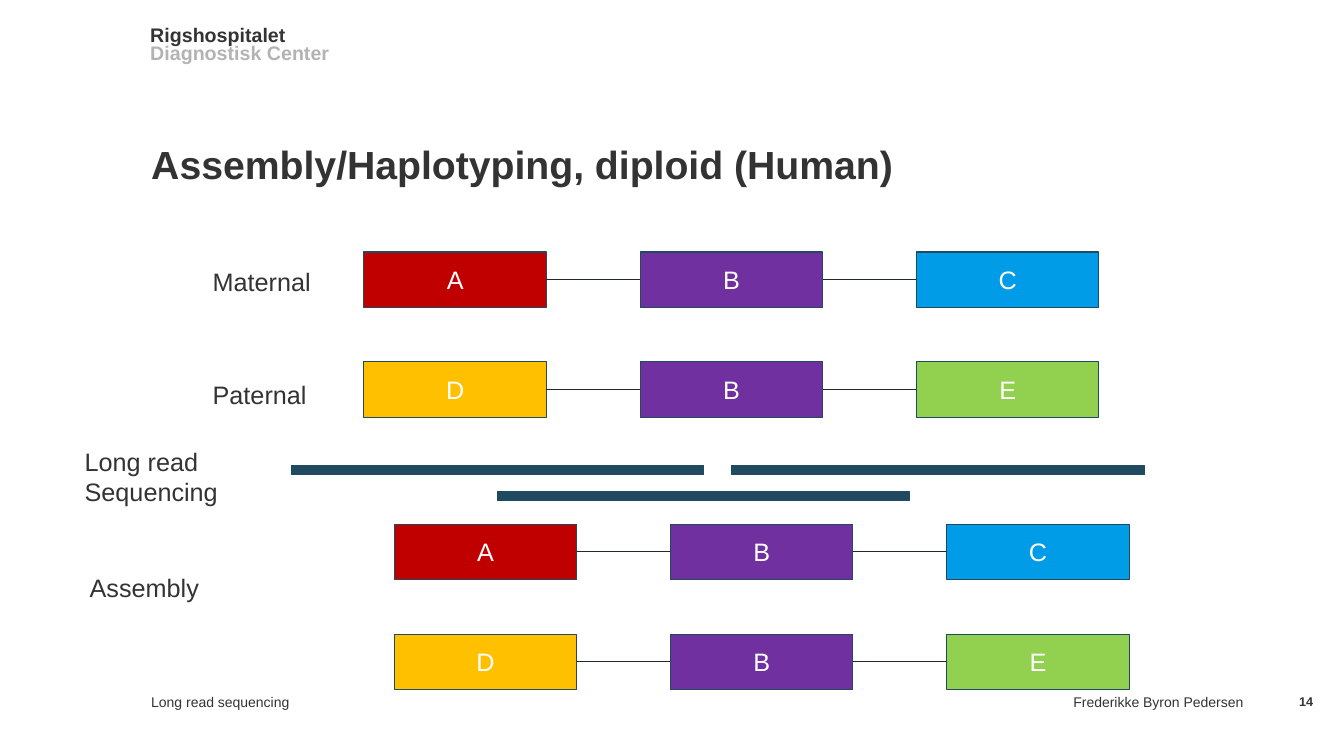
from lxml import etree
from pptx import Presentation
from pptx.dml.color import RGBColor
from pptx.enum.shapes import MSO_CONNECTOR, MSO_SHAPE
from pptx.enum.text import MSO_ANCHOR, PP_ALIGN
from pptx.oxml.ns import qn
from pptx.util import Inches, Pt

INK = RGBColor(0x33, 0x33, 0x33)
GREY = RGBColor(0xB3, 0xB3, 0xB3)
WHITE = RGBColor(0xFF, 0xFF, 0xFF)
PETROL = RGBColor(0x1F, 0x4A, 0x60)
LINK = RGBColor(0x1F, 0x29, 0x36)
GENE_COLORS = {
    "A": RGBColor(0xC0, 0x00, 0x00),
    "B": RGBColor(0x70, 0x30, 0xA0),
    "C": RGBColor(0x00, 0x9C, 0xE8),
    "D": RGBColor(0xFF, 0xC0, 0x00),
    "E": RGBColor(0x92, 0xD0, 0x50),
}
FONT = "Arial"
LEFT, CENTER, RIGHT = PP_ALIGN.LEFT, PP_ALIGN.CENTER, PP_ALIGN.RIGHT

TITLE = "Assembly/Haplotyping, diploid (Human)"
# text, (left, top, width, height), size, color, bold, alignment
TEXTS = [
    ("Rigshospitalet", (1.49, 0.23, 6.69, 0.24), 14, INK, True, LEFT),
    ("Diagnostisk Center", (1.49, 0.41, 6.69, 0.46), 14, GREY, True, LEFT),
    ("Maternal", (2.11, 2.64, 1, 0.55), 18, INK, False, LEFT),
    ("Paternal", (2.11, 3.76, 1, 0.55), 18, INK, False, LEFT),
    ("Long read Sequencing", (0.84, 4.43, 2.2, 0.91), 18, INK, False, LEFT),
    ("Assembly", (0.89, 5.68, 1.84, 0.51), 18, INK, False, LEFT),
    ("Long read sequencing", (1.5, 6.88, 4.13, 0.2), 10, INK, False, LEFT),
    ("Frederikke Byron Pedersen", (8.63, 6.88, 3.7, 0.2), 10, INK, False, RIGHT),
    ("14", (12.58, 6.88, 0.75, 0.2), 9, INK, True, CENTER),
]
HAPLOTYPES = ["ABC", "DBE"]
PAIRS = [(3.61, 2.5), (3.91, 5.2)]  # left, top of chromosomes and assembly
READS = [(2.89, 4.62), (4.93, 4.88), (7.26, 4.62)]
GENE_W, GENE_H = 1.81, 0.55
GENE_STEP, HAPLOTYPE_STEP = 2.74, 1.09
READ_W, READ_H = 4.09, 0.09


def write(tf, text, size, color, bold=False, align=LEFT, anchor=MSO_ANCHOR.TOP):
    tf.margin_left = tf.margin_right = tf.margin_top = tf.margin_bottom = 0
    tf.word_wrap = True
    tf.vertical_anchor = anchor
    p = tf.paragraphs[0]
    p.alignment = align
    r = p.add_run()
    r.text = text
    r.font.name, r.font.size, r.font.bold = FONT, Pt(size), bold
    r.font.color.rgb = color
    return p


def add_bar(slide, left, top, width, height, color):
    sp = slide.shapes.add_shape(
        MSO_SHAPE.RECTANGLE, *map(Inches, (left, top, width, height)))
    sp.shadow.inherit = False
    sp.fill.solid()
    sp.fill.fore_color.rgb = color
    sp.line.color.rgb = PETROL
    sp.line.width = Pt(0.75)
    return sp


def add_link(slide, left, right, y):
    line = slide.shapes.add_connector(
        MSO_CONNECTOR.STRAIGHT, *map(Inches, (left, y, right, y)))
    line.line.color.rgb = LINK
    line.line.width = Pt(0.75)
    etree.SubElement(line._element.spPr, qn("a:effectLst"))


def add_haplotype(slide, genes, left, top):
    """Draw a row of gene boxes joined by thin lines."""
    for i, gene in enumerate(genes):
        x = left + i * GENE_STEP
        box = add_bar(slide, x, top, GENE_W, GENE_H, GENE_COLORS[gene])
        write(box.text_frame, gene, 18, WHITE, align=CENTER,
              anchor=MSO_ANCHOR.MIDDLE)
        if i:
            add_link(slide, x - GENE_STEP + GENE_W, x, top + GENE_H / 2)


def main():
    prs = Presentation()
    prs.slide_width, prs.slide_height = Inches(13.33), Inches(7.5)
    slide = prs.slides.add_slide(prs.slide_layouts[5])

    title = slide.shapes.title
    title.left, title.top = Inches(1.5), Inches(0.95)
    title.width, title.height = Inches(11.09), Inches(0.91)
    p = write(title.text_frame, TITLE, 28, INK, True, anchor=MSO_ANCHOR.BOTTOM)
    p.line_spacing = 0.85

    for text, place, size, color, bold, align in TEXTS:
        box = slide.shapes.add_textbox(*map(Inches, place))
        write(box.text_frame, text, size, color, bold, align)

    for left, top in PAIRS:
        for row, genes in enumerate(HAPLOTYPES):
            add_haplotype(slide, genes, left, top + row * HAPLOTYPE_STEP)

    for left, top in READS:
        add_bar(slide, left, top, READ_W, READ_H, PETROL)

    prs.save("out.pptx")


if __name__ == "__main__":
    main()
